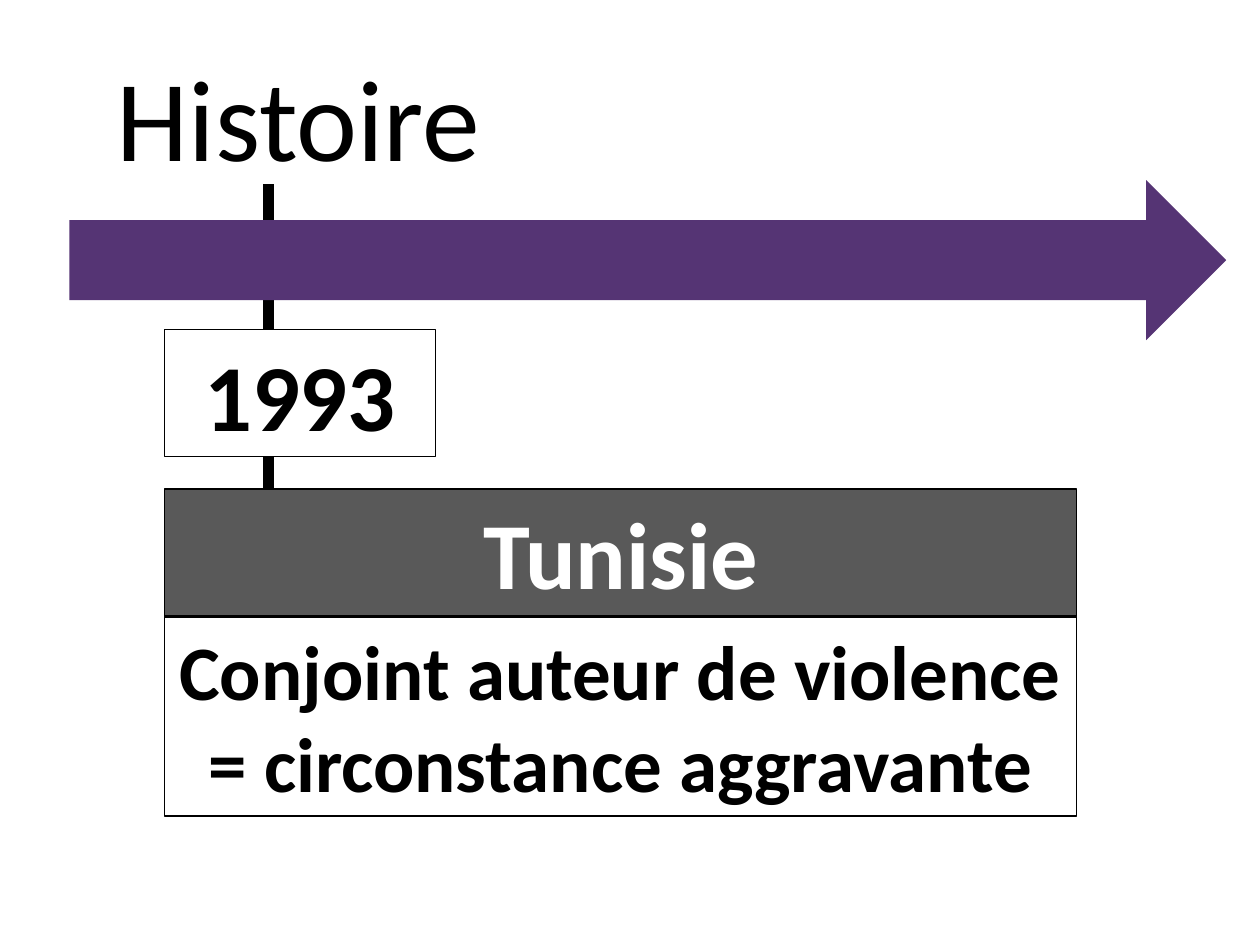
import pptx
import pptx.dml.color
import pptx.enum.shapes
import pptx.enum.text
import pptx.oxml.xmlchemy
import pptx.util
from lxml import etree

Cm = pptx.util.Cm
Pt = pptx.util.Pt
SHAPE = pptx.enum.shapes.MSO_SHAPE
ANCHOR = pptx.enum.text.MSO_ANCHOR
ALIGN = pptx.enum.text.PP_ALIGN

FONT = "Calibri"
COLORS = {"black": "000000", "white": "FFFFFF", "purple": "553474", "gray": "595959"}


def rgb(name):
    """Return the named palette colour."""
    return pptx.dml.color.RGBColor.from_string(COLORS[name])


def write(paragraph, text, size, color, bold=False):
    """Add one formatted run to a paragraph."""
    run = paragraph.add_run()
    run.text = text
    run.font.name = FONT
    run.font.size = Pt(size)
    run.font.bold = bold
    run.font.color.rgb = rgb(color)


def place_title(slide, left, top, width, height):
    """Place the heading in the title placeholder."""
    heading = slide.shapes.title
    heading.left, heading.top = Cm(left), Cm(top)
    heading.width, heading.height = Cm(width), Cm(height)
    heading.text_frame.vertical_anchor = ANCHOR.MIDDLE
    paragraph = heading.text_frame.paragraphs[0]
    paragraph.alignment = ALIGN.LEFT
    paragraph.line_spacing = 0.9
    write(paragraph, "Histoire", 66, "black")


def add_block(slide, kind, left, top, width, height, fill):
    """Add a filled preset shape without shadow or outline."""
    block = slide.shapes.add_shape(kind, Cm(left), Cm(top), Cm(width), Cm(height))
    block.shadow.inherit = False
    block.fill.solid()
    block.fill.fore_color.rgb = rgb(fill)
    block.line.fill.background()
    return block


def add_label(slide, left, top, width, height, text, size, fill, color, anchor=ANCHOR.TOP):
    """Add a thinly outlined box with bold centred text."""
    label = add_block(slide, SHAPE.RECTANGLE, left, top, width, height, fill)
    label.line.color.rgb = rgb("black")
    label.line.width = Pt(0.75)
    frame = label.text_frame
    frame.word_wrap = True
    frame.auto_size = pptx.enum.text.MSO_AUTO_SIZE.SHAPE_TO_FIT_TEXT
    frame.vertical_anchor = anchor
    frame.paragraphs[0].alignment = ALIGN.CENTER
    write(frame.paragraphs[0], text, size, color, True)


def place_timeline(slide, left, top, width, height):
    """Draw the date marker and the time arrow over it."""
    marker_x, marker_top = Cm(left + 4.01), Cm(top + 0.08)
    marker = slide.shapes.add_connector(
        pptx.enum.shapes.MSO_CONNECTOR.STRAIGHT,
        marker_x, marker_top, marker_x, marker_top + Cm(10))
    marker.line.color.rgb = rgb("black")
    marker.line.width = Pt(6)
    etree.SubElement(marker.line._get_or_add_ln().getparent(),
                     pptx.oxml.ns.qn("a:effectLst"))
    add_block(slide, SHAPE.RIGHT_ARROW, left, top, width, height, "purple")


def place_event(slide, left, top, width):
    """Stack the year, the country and the measure."""
    add_label(slide, left, top + 5.79, width, 4.01,
              "Conjoint auteur de violence = circonstance aggravante",
              44, "white", "black")
    add_label(slide, left, top + 3.21, width, 2.56, "Tunisie", 54, "gray", "white")
    add_label(slide, left, top, 5.46, 2.56, "1993", 54, "white", "black", ANCHOR.MIDDLE)


def main():
    """Build and save the slide."""
    deck = pptx.Presentation()
    deck.slide_width, deck.slide_height = Cm(25.4), Cm(19.05)
    slide = deck.slides.add_slide(deck.slide_layouts[5])
    place_title(slide, 2.1, 0.66, 21.9, 3.68)
    place_timeline(slide, 1.4, 3.63, 23.32, 3.23)
    place_event(slide, 3.32, 6.65, 18.39)
    deck.save("out.pptx")


if __name__ == "__main__":
    main()
